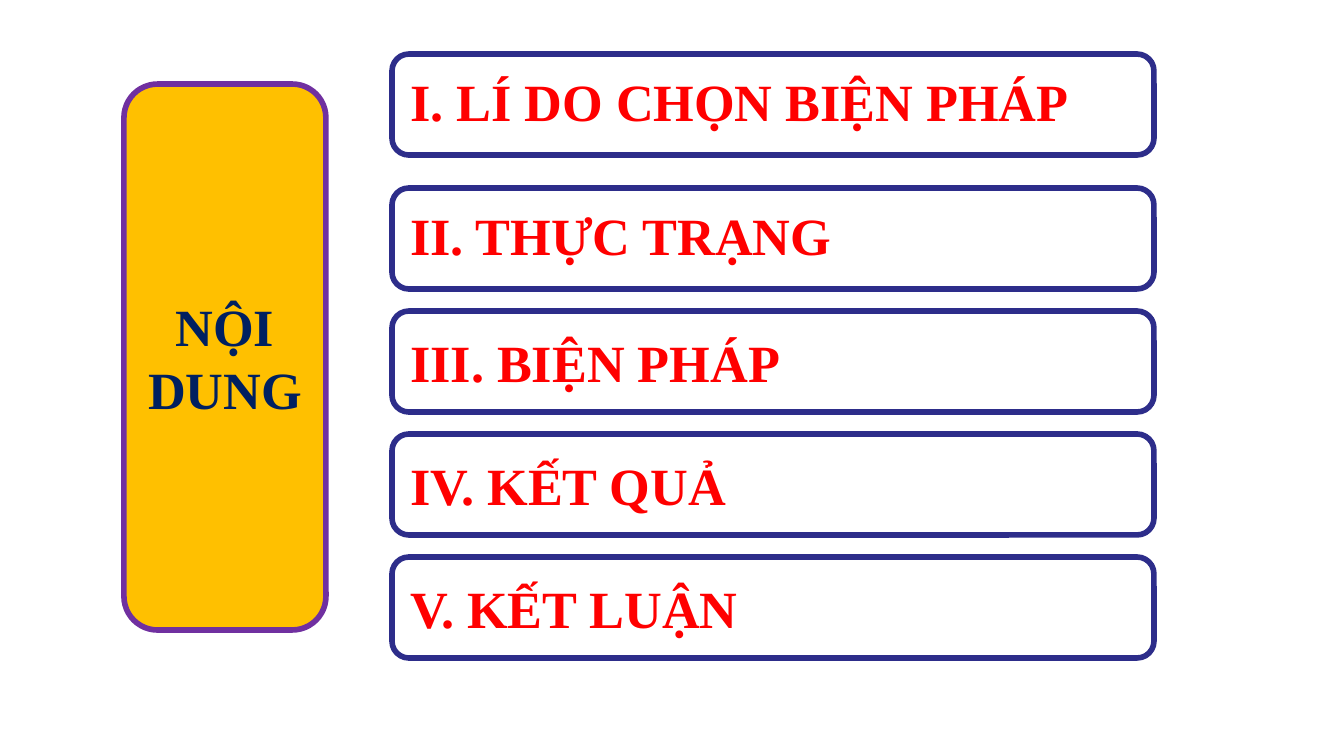
from pptx import Presentation
from pptx.dml.color import RGBColor
from pptx.enum.shapes import MSO_SHAPE as Shape
from pptx.enum.text import MSO_ANCHOR as Anchor, PP_ALIGN as Align
from pptx.util import Pt

TITLE = "NỘI DUNG"
OPENING = {"line_spacing": 0.9, "space_before": Pt(10)}
CLOSING = {"space_after": Pt(6)}
SECTIONS = [
    ("I. LÍ DO CHỌN BIỆN PHÁP", 54, OPENING),
    ("II. THỰC TRẠNG", 188, OPENING),
    ("III. BIỆN PHÁP", 311, {}),
    ("IV. KẾT QUẢ", 434, CLOSING),
    ("V. KẾT LUẬN", 557, CLOSING),
]
SECTION_LEFT, SECTION_WIDTH, SECTION_HEIGHT = 392, 762, 101
TITLE_BOX = (124, 84, 202, 546)


def px(length):
    """Turn slide pixels into EMU."""
    return round(length * 914400 / 134.4)


def rgb(color):
    """Turn a hex string into a colour."""
    return RGBColor.from_string(color)


def add_panel(slide, text, box, fill, border, ink, align, spacing):
    """Add a rounded, outlined panel with one bold paragraph."""
    panel = slide.shapes.add_shape(Shape.FLOWCHART_ALTERNATE_PROCESS, *map(px, box))
    panel.shadow.inherit = False
    panel.fill.solid()
    panel.fill.fore_color.rgb = rgb(fill)
    panel.line.color.rgb = rgb(border)
    panel.line.width = Pt(3)
    frame = panel.text_frame
    frame.text = text
    frame.word_wrap = True
    frame.vertical_anchor = Anchor.MIDDLE
    paragraph = frame.paragraphs[0]
    paragraph.alignment = align
    for attribute, value in spacing.items():
        setattr(paragraph, attribute, value)
    font = paragraph.runs[0].font
    font.name, font.size, font.bold = "Times New Roman", Pt(28), True
    font.color.rgb = rgb(ink)


def main():
    """Build the contents slide."""
    deck = Presentation()
    deck.slide_width, deck.slide_height = px(1344), px(756)
    slide = deck.slides.add_slide(deck.slide_layouts[6])
    add_panel(slide, TITLE, TITLE_BOX, "FFC000", "7030A0", "002060", Align.CENTER, {})
    for heading, top, spacing in SECTIONS:
        box = (SECTION_LEFT, top, SECTION_WIDTH, SECTION_HEIGHT)
        add_panel(slide, heading, box, "FFFFFF", "2D2D8A", "FF0000", Align.JUSTIFY, spacing)
    deck.save("out.pptx")


if __name__ == "__main__":
    main()
